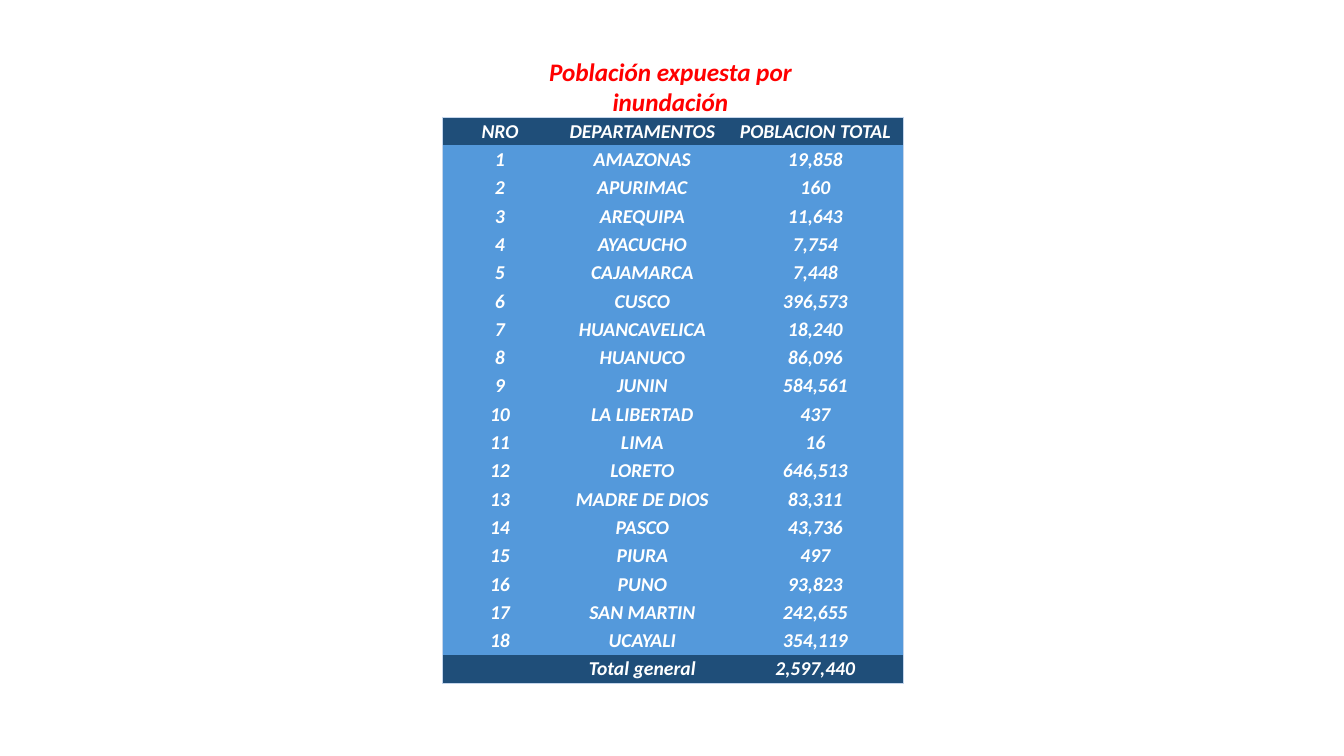
from lxml.etree import SubElement as Sub
from pptx import Presentation
from pptx.dml.color import RGBColor
from pptx.enum.text import MSO_ANCHOR as Anchor, MSO_AUTO_SIZE as Fit, PP_ALIGN as Align
from pptx.oxml.ns import qn
from pptx.util import Inches, Pt

RED = RGBColor(0xFF, 0x00, 0x00)
WHITE = RGBColor(0xFF, 0xFF, 0xFF)
NAVY = RGBColor(0x1F, 0x4E, 0x79)
BLUE = RGBColor(0x54, 0x99, 0xDB)
PALE = RGBColor(0xC4, 0xD5, 0xEB)

FONT = "Calibri"
SIZE = 14
NO_GRID = "{2D5ABB26-0587-4C30-8999-92F81FD0307C}"
WIDTHS = (1.14, 1.69, 1.75)

HEAD = ("NRO", "DEPARTAMENTOS", "POBLACION TOTAL")
PEOPLE = (
    ("AMAZONAS", 19858), ("APURIMAC", 160), ("AREQUIPA", 11643),
    ("AYACUCHO", 7754), ("CAJAMARCA", 7448), ("CUSCO", 396573),
    ("HUANCAVELICA", 18240), ("HUANUCO", 86096), ("JUNIN", 584561),
    ("LA LIBERTAD", 437), ("LIMA", 16), ("LORETO", 646513),
    ("MADRE DE DIOS", 83311), ("PASCO", 43736), ("PIURA", 497),
    ("PUNO", 93823), ("SAN MARTIN", 242655), ("UCAYALI", 354119),
)
TOTAL = 2597440


def write(frame, text, size, color):
    par = frame.paragraphs[0]
    par.alignment = Align.CENTER
    if not text:
        # An empty cell still needs its text size, or its row grows
        Sub(par._p, qn("a:endParaRPr"), sz=str(size * 100))
        return
    run = par.add_run()
    run.text = text
    font = run.font
    font.name, font.size = FONT, Pt(size)
    font.bold = font.italic = True
    font.color.rgb = color


def add_title(slide, left, top, width, height):
    box = slide.shapes.add_textbox(Inches(left), Inches(top), Inches(width), Inches(height))
    frame = box.text_frame
    frame.word_wrap = False
    frame.auto_size = Fit.SHAPE_TO_FIT_TEXT
    write(frame, "Población expuesta por inundación", 18, RED)


def add_edge(cell, side):
    line = Sub(cell._tc.get_or_add_tcPr(), qn("a:ln" + side), w=str(Pt(0.5)))
    fill = Sub(line, qn("a:solidFill"))
    Sub(fill, qn("a:srgbClr"), val=str(PALE))


def add_table(slide, left, top, width, height):
    rows = [HEAD]
    rows += [(str(n), name, f"{count:,}") for n, (name, count) in enumerate(PEOPLE, 1)]
    rows.append(("", "Total general", f"{TOTAL:,}"))
    last, end = len(rows) - 1, len(HEAD) - 1

    frame = slide.shapes.add_table(len(rows), len(HEAD), Inches(left), Inches(top),
                                   Inches(width), Inches(height))
    table = frame.table
    table.first_row = table.horz_banding = False
    table._tbl.tblPr.find(qn("a:tableStyleId")).text = NO_GRID
    for col, share in zip(table.columns, WIDTHS):
        col.width = Inches(width * share / sum(WIDTHS))
    for row in table.rows:
        row.height = Inches(height / len(rows))

    for r, row in enumerate(rows):
        for c, text in enumerate(row):
            cell = table.cell(r, c)
            cell.vertical_anchor = Anchor.MIDDLE
            cell.margin_left = cell.margin_right = cell.margin_top = Inches(0.01)
            cell.margin_bottom = 0
            # Thin outline round the whole table
            for side, outer in (("L", c == 0), ("R", c == end), ("T", r == 0), ("B", r == last)):
                if outer:
                    add_edge(cell, side)
            cell.fill.solid()
            cell.fill.fore_color.rgb = NAVY if r in (0, last) else BLUE
            write(cell.text_frame, text, SIZE, WHITE)


def main():
    deck = Presentation()
    deck.slide_width, deck.slide_height = Inches(13.33), Inches(7.5)
    slide = deck.slides.add_slide(deck.slide_layouts[6])
    add_title(slide, 4.75, 0.51, 3.8, 0.4)
    add_table(slide, 4.39, 1.16, 4.57, 5.62)
    deck.save("out.pptx")


if __name__ == "__main__":
    main()
